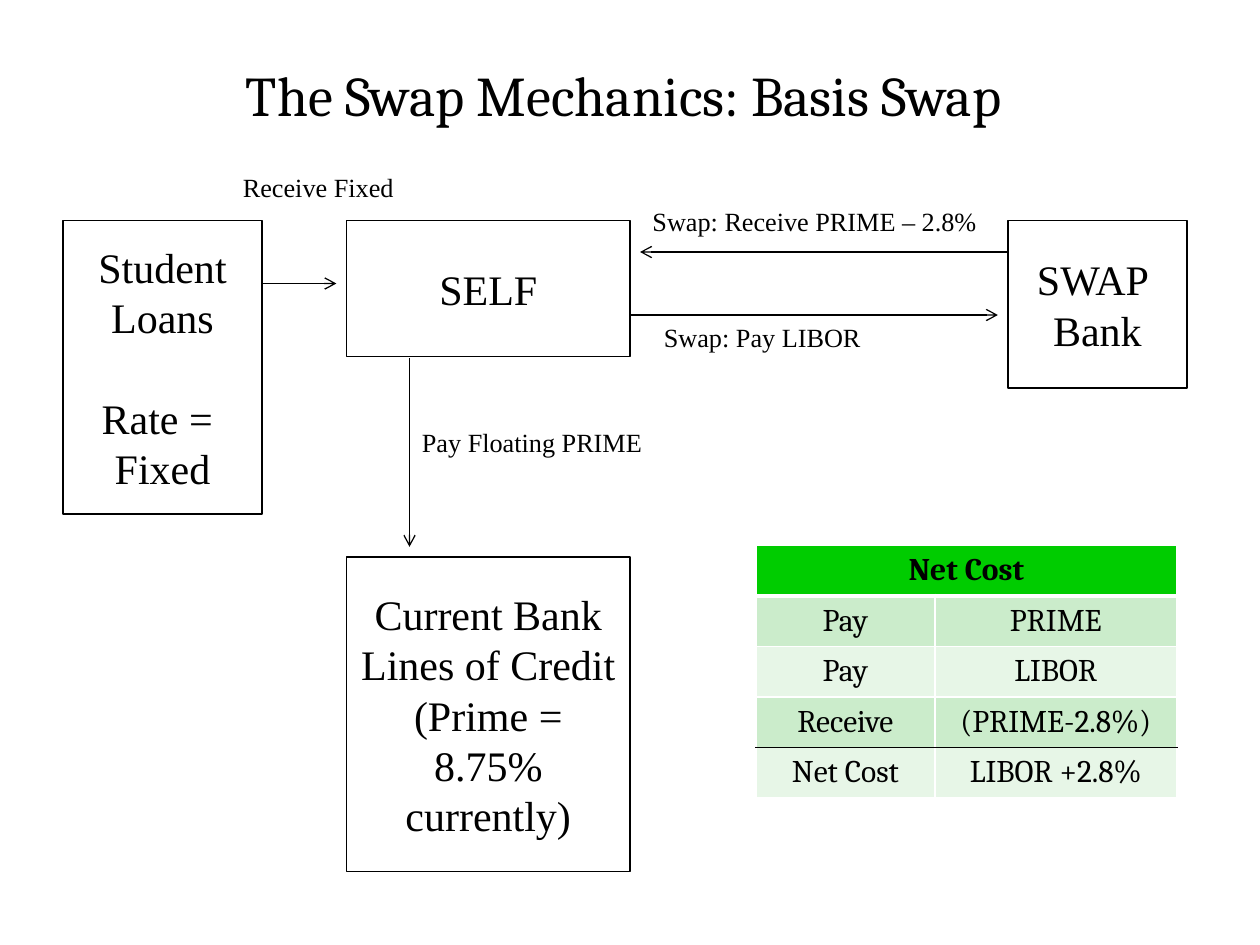
from dataclasses import dataclass

from lxml.etree import SubElement
from pptx import Presentation
from pptx.dml.color import RGBColor
from pptx.enum.shapes import MSO_CONNECTOR, MSO_SHAPE
from pptx.enum.text import MSO_ANCHOR, PP_ALIGN
from pptx.oxml.ns import qn
from pptx.util import Inches, Pt


@dataclass(frozen=True)
class Theme:
    black: str = "000000"
    white: str = "FFFFFF"
    header: str = "00CC00"
    bands: tuple = ("CBECCB", "E7F6E7")
    heading_font: str = "Cambria"
    body_font: str = "Times New Roman"
    title_size: int = 32
    box_size: int = 24
    table_size: int = 18
    label_size: int = 15
    line_width: float = 0.75


THEME = Theme()


def rgb(value):
    return RGBColor.from_string(value)


def write(frame, lines, size, font, align=PP_ALIGN.CENTER, bold=False):
    for index, line in enumerate(lines):
        paragraph = frame.paragraphs[0] if index == 0 else frame.add_paragraph()
        paragraph.text = line
        paragraph.alignment = align
        paragraph.font.size = Pt(size)
        paragraph.font.name = font
        paragraph.font.bold = bold
        paragraph.font.color.rgb = rgb(THEME.black)


def add_title(slide, box, text):
    frame = slide.shapes.add_textbox(*map(Inches, box)).text_frame
    frame.word_wrap = True
    frame.vertical_anchor = MSO_ANCHOR.MIDDLE
    write(frame, [text], THEME.title_size, THEME.heading_font)


def add_party(slide, box, lines, wrap=False):
    shape = slide.shapes.add_shape(MSO_SHAPE.RECTANGLE, *map(Inches, box))
    shape.shadow.inherit = False
    shape.fill.background()
    shape.line.color.rgb = rgb(THEME.black)
    shape.line.width = Pt(THEME.line_width)
    frame = shape.text_frame
    frame.word_wrap = wrap
    frame.vertical_anchor = MSO_ANCHOR.MIDDLE
    write(frame, lines, THEME.box_size, THEME.body_font)
    return frame


def add_flow(slide, start, end, label, label_box):
    # Arrow
    arrow = slide.shapes.add_connector(
        MSO_CONNECTOR.STRAIGHT, *map(Inches, (*start, *end)))
    arrow.line.color.rgb = rgb(THEME.black)
    arrow.line.width = Pt(THEME.line_width)
    properties = arrow.line._get_or_add_ln()
    SubElement(properties, qn("a:tailEnd"), type="arrow")
    SubElement(properties.getparent(), qn("a:effectLst"))

    # Label
    frame = slide.shapes.add_textbox(*map(Inches, label_box)).text_frame
    frame.word_wrap = True
    write(frame, [label], THEME.label_size, THEME.body_font, PP_ALIGN.LEFT)


def set_borders(cell, top, bottom):
    properties = cell._tc.get_or_add_tcPr()
    side = (THEME.white, 1)
    edges = {"a:lnL": side, "a:lnR": side, "a:lnT": top, "a:lnB": bottom}
    for position, (tag, (color, width)) in enumerate(edges.items()):
        line = SubElement(properties, qn(tag), w=str(Pt(width)))
        SubElement(SubElement(line, qn("a:solidFill")), qn("a:srgbClr"), val=color)
        properties.insert(position, line)


def add_net_cost_table(slide, box, column_widths, rows):
    table = slide.shapes.add_table(
        len(rows), len(column_widths), *map(Inches, box)).table
    for column, width in zip(table.columns, column_widths):
        column.width = Inches(width)

    # Rules between rows: thick under the header, black above the total
    thin = (THEME.white, 1)
    rules = [thin] * (len(rows) + 1)
    rules[1] = (THEME.white, 3)
    rules[-2] = (THEME.black, 1)

    for r, row in enumerate(rows):
        table.rows[r].height = Inches(box[3] / len(rows))
        for c, text in enumerate(row):
            cell = table.cell(r, c)
            cell.vertical_anchor = MSO_ANCHOR.MIDDLE
            cell.fill.solid()
            cell.fill.fore_color.rgb = rgb(
                THEME.bands[(r - 1) % 2] if r else THEME.header)
            set_borders(cell, rules[r], rules[r + 1])
            write(cell.text_frame, [text], THEME.table_size,
                  THEME.heading_font, bold=r == 0)
    table.cell(0, 0).merge(table.cell(0, len(column_widths) - 1))


def main():
    presentation = Presentation()
    presentation.slide_width = Inches(10)
    presentation.slide_height = Inches(7.5)
    slide = presentation.slides.add_slide(presentation.slide_layouts[6])

    add_title(slide, (0.75, 0.25, 8.5, 1), "The Swap Mechanics: Basis Swap ")

    # Parties
    add_party(slide, (2.75, 1.75, 2.25, 1.08), ["SELF"])
    add_party(slide, (2.75, 4.42, 2.25, 2.5),
              ["Current Bank Lines of Credit", "(Prime = 8.75% currently)"], wrap=True)
    loans = add_party(slide, (0.5, 1.75, 1.58, 2.33),
                      ["Student", "Loans", "Rate = ", "Fixed"])
    loans.paragraphs[2].space_before = Pt(1.2 * THEME.box_size)
    add_party(slide, (8, 1.75, 1.42, 1.33), ["SWAP ", "Bank"])

    # Cash flows
    flows = [
        ((2.08, 2.25), (2.67, 2.25), "Receive Fixed", (1.83, 1.31, 1.5, 0.35)),
        ((3.25, 2.84), (3.25, 4.34), "Pay Floating PRIME", (3.25, 3.33, 2.25, 0.35)),
        ((8, 2), (5.08, 2), "Swap: Receive PRIME – 2.8%", (5.08, 1.58, 3, 0.35)),
        ((5, 2.5), (7.92, 2.5), "Swap: Pay LIBOR", (5.17, 2.5, 2.75, 0.35)),
    ]
    for flow in flows:
        add_flow(slide, *flow)

    add_net_cost_table(slide, (6, 4.33, 3.33, 2), (1.42, 1.92), [
        ("Net Cost", ""),
        ("Pay", "PRIME"),
        ("Pay", "LIBOR"),
        ("Receive", "(PRIME-2.8%)"),
        ("Net Cost", "LIBOR +2.8%"),
    ])

    presentation.save("out.pptx")


if __name__ == "__main__":
    main()
